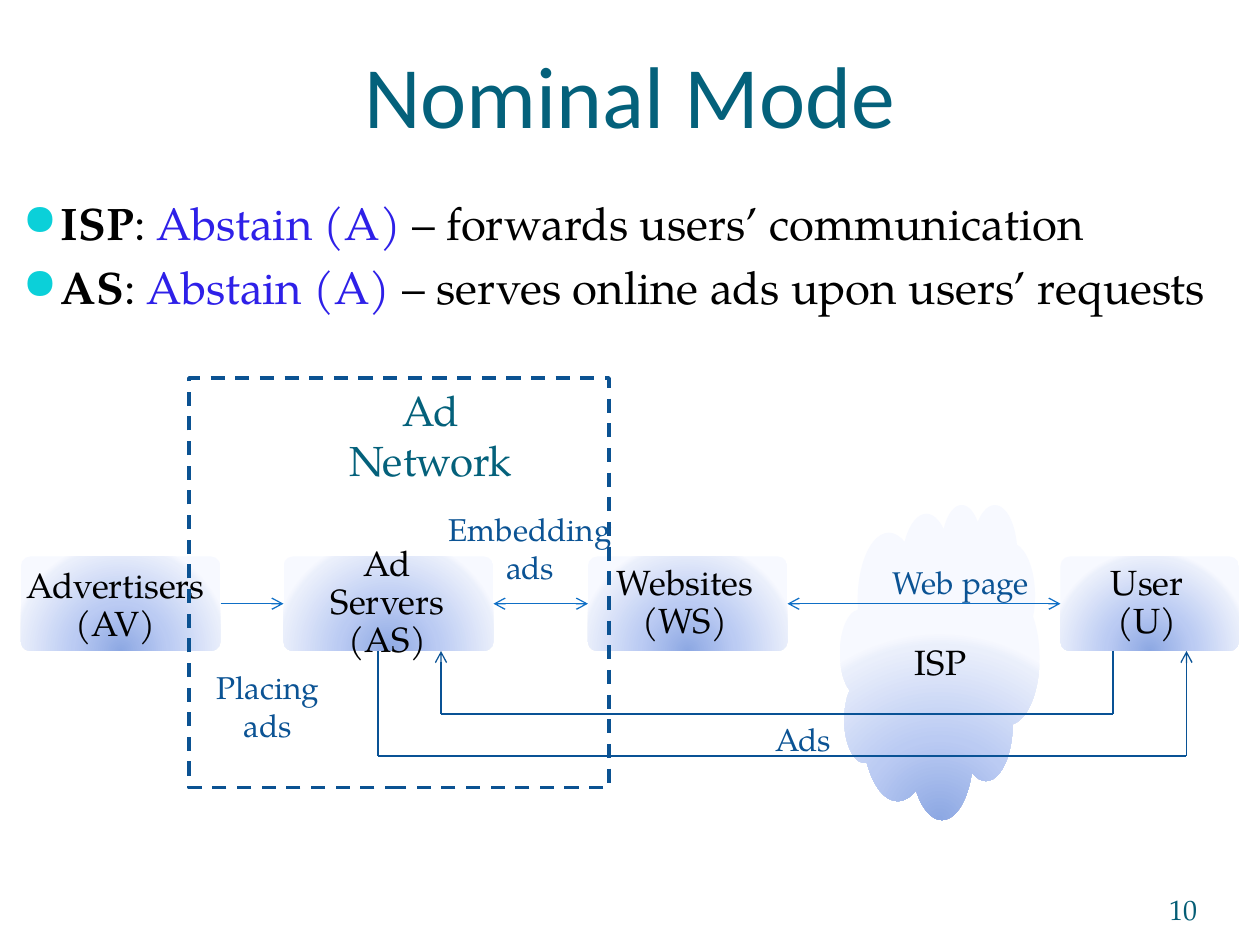
from lxml import etree
from pptx import Presentation
from pptx.dml.color import RGBColor
from pptx.enum.dml import MSO_LINE
from pptx.enum.shapes import MSO_CONNECTOR, MSO_SHAPE
from pptx.enum.text import MSO_ANCHOR, PP_ALIGN
from pptx.oxml import parse_xml
from pptx.oxml.ns import nsdecls, qn
from pptx.util import Pt

LEFT, CENTER, RIGHT = PP_ALIGN.LEFT, PP_ALIGN.CENTER, PP_ALIGN.RIGHT
TOP, MIDDLE, BOTTOM = MSO_ANCHOR.TOP, MSO_ANCHOR.MIDDLE, MSO_ANCHOR.BOTTOM
ROUNDED, CLOUD, RECTANGLE = MSO_SHAPE.ROUNDED_RECTANGLE, MSO_SHAPE.CLOUD, MSO_SHAPE.RECTANGLE
STRAIGHT = MSO_CONNECTOR.STRAIGHT
DASH = MSO_LINE.DASH

SERIF, SANS = "TeX Gyre Pagella", "Calibri"
BLACK, TEAL, NAVY, VIOLET = "000000", "04617B", "0B5394", "2E20E8"
LINK, ROUTE = "0F6FC6", "095295"
SIDE_LEFT, SIDE_RIGHT = 1, 3

GRADIENT_STOPS = [(0, "8DA8E3"), (43, "BBCBF3"), (93, "EAEFFB"), (100, "F7F9FF")]
GRADIENT = (
    f'<a:gradFill {nsdecls("a")} rotWithShape="1"><a:gsLst>'
    + "".join(f'<a:gs pos="{position * 1000}"><a:srgbClr val="{color}"/></a:gs>'
              for position, color in GRADIENT_STOPS)
    + '</a:gsLst><a:path path="circle">'
    '<a:fillToRect l="50000" t="130000" r="50000" b="-30000"/></a:path></a:gradFill>'
)

presentation = Presentation()
presentation.slide_width, presentation.slide_height = Pt(720), Pt(540)
slide = presentation.slides.add_slide(presentation.slide_layouts[6])
shapes = slide.shapes


def add_text(text, place, size=18, color=NAVY, font=SERIF, align=CENTER, anchor=TOP,
             insets=(7.2, 3.6), line_spacing=None, space_before=None, shape=None):
    """Write text, or a list of paragraphs of (text, color, bold) runs, in a box or given shape."""
    box = shape or shapes.add_textbox(*map(Pt, place))
    frame = box.text_frame
    frame.word_wrap = True
    frame.vertical_anchor = anchor
    frame.margin_left = frame.margin_right = Pt(insets[0])
    frame.margin_top = frame.margin_bottom = Pt(insets[1])
    if isinstance(text, str):
        text = [[(line, color, False)] for line in text.split("\n")]
    for index, runs in enumerate(text):
        paragraph = frame.add_paragraph() if index else frame.paragraphs[0]
        paragraph.alignment = align
        paragraph.line_spacing = line_spacing
        paragraph.space_before = space_before
        for words, run_color, bold in runs:
            run = paragraph.add_run()
            run.text = words
            run.font.name, run.font.size, run.font.bold = font, Pt(size), bold
            run.font.color.rgb = RGBColor.from_string(run_color)
    return box


def add_line(start, end, color, arrows=()):
    """Draw a thin line; arrows names the ends to mark: headEnd, tailEnd."""
    connector = shapes.add_connector(STRAIGHT, *map(Pt, start + end))
    connector.line.width = Pt(0.75)
    connector.line.color.rgb = RGBColor.from_string(color)
    properties = connector.element.spPr
    for arrow in arrows:
        etree.SubElement(properties.find(qn("a:ln")), qn(f"a:{arrow}"), type="arrow")
    etree.SubElement(properties, qn("a:effectLst"))
    return connector


# Title, slide number and bullets
add_text("Nominal Mode", (36, 20, 648, 90), size=50, color=TEAL, font=SANS, insets=(0, 3.6))
add_text("10", (624, 500, 60, 29), size=16, color="045D75", align=RIGHT, anchor=BOTTOM,
         insets=(0, 0))
bullets = [
    [(party, BLACK, True), (": ", BLACK, False), ("Abstain (A)", VIOLET, False),
     (f" – {action}", BLACK, False)]
    for party, action in [("ISP", "forwards users’ communication"),
                          ("AS", "serves online ads upon users’ requests")]
]
bullet_box = add_text(bullets, (6, 108, 702, 96), size=26, align=LEFT, space_before=Pt(5.2))
for paragraph in bullet_box.text_frame.paragraphs:
    properties = paragraph._p.get_or_add_pPr()
    properties.set("marL", str(Pt(21.6)))
    properties.set("indent", str(-Pt(21.6)))
    bullet_color = etree.SubElement(properties, qn("a:buClr"))
    etree.SubElement(bullet_color, qn("a:srgbClr"), val="0BD0D9")
    etree.SubElement(properties, qn("a:buSzPct"), val="95000")
    etree.SubElement(properties, qn("a:buChar"), char="●")

# Parties: name, outline, place of the outline, place of the text
parties = [
    ("User\n(U)", ROUNDED, (606, 318, 102, 54), (606, 319, 99, 51)),
    ("Ad Servers\n(AS)", ROUNDED, (162, 318, 120, 54), (163, 319, 117, 51)),
    ("Websites\n(WS)", ROUNDED, (336, 318, 114, 54), (336, 319, 111, 51)),
    ("Advertisers\n(AV)", ROUNDED, (12, 318, 114, 54), (0, 321, 132, 51)),
    ("ISP", CLOUD, (480, 288, 114, 180), (486, 299, 111, 169)),
]
nodes = []
for name, outline, place, text_place in parties:
    node = shapes.add_shape(outline, *map(Pt, place))
    if outline == ROUNDED:
        node.adjustments[0] = 0.1
    node.fill.gradient()
    properties = node.element.spPr
    properties.replace(properties.find(qn("a:gradFill")), parse_xml(GRADIENT))
    node.line.fill.background()
    node.shadow.inherit = False
    nodes.append(node)

    label_shape = None
    if outline == CLOUD:
        label_shape = shapes.add_shape(CLOUD, *map(Pt, text_place))
        label_shape.fill.background()
        label_shape.line.fill.background()
        label_shape.shadow.inherit = False
    add_text(name, text_place, size=20, color=BLACK, anchor=MIDDLE, insets=(11.5, 11.5),
             line_spacing=0.9, shape=label_shape)
user, ad_servers, websites, advertisers, isp = nodes

# Links between neighbouring parties
both_ends = ("headEnd", "tailEnd")
for source, target, arrows in [(advertisers, ad_servers, ("tailEnd",)),
                               (ad_servers, websites, both_ends),
                               (websites, user, both_ends)]:
    link = add_line((0, 0), (0, 0), LINK, arrows)
    link.begin_connect(source, SIDE_RIGHT)
    link.end_connect(target, SIDE_LEFT)

# Ad network frame
network = shapes.add_shape(RECTANGLE, Pt(108), Pt(216), Pt(240), Pt(234))
network.fill.background()
network.line.color.rgb = RGBColor.from_string("0B5292")
network.line.width = Pt(2)
network.line.dash_style = DASH
network.shadow.inherit = False
add_text("Ad Network", (174, 216, 144, 33), size=24, color=TEAL)

for label, place in [("Placing ads", (102, 378, 102, 29)),
                     ("Embedding ads", (246, 288, 114, 51)),
                     ("Web page", (498, 318, 102, 29)),
                     ("Ads", (420, 408, 78, 29))]:
    add_text(label, place)

# Routes under the parties, each ending in an arrow at the last point
box_bottom = 372
for start_x, end_x, depth in [(636, 252, 408), (216, 678, 432)]:
    points = [(start_x, box_bottom), (start_x, depth), (end_x, depth), (end_x, box_bottom)]
    for start, end in zip(points, points[1:]):
        add_line(start, end, ROUTE, ("tailEnd",) if end == points[-1] else ())

presentation.save("out.pptx")
